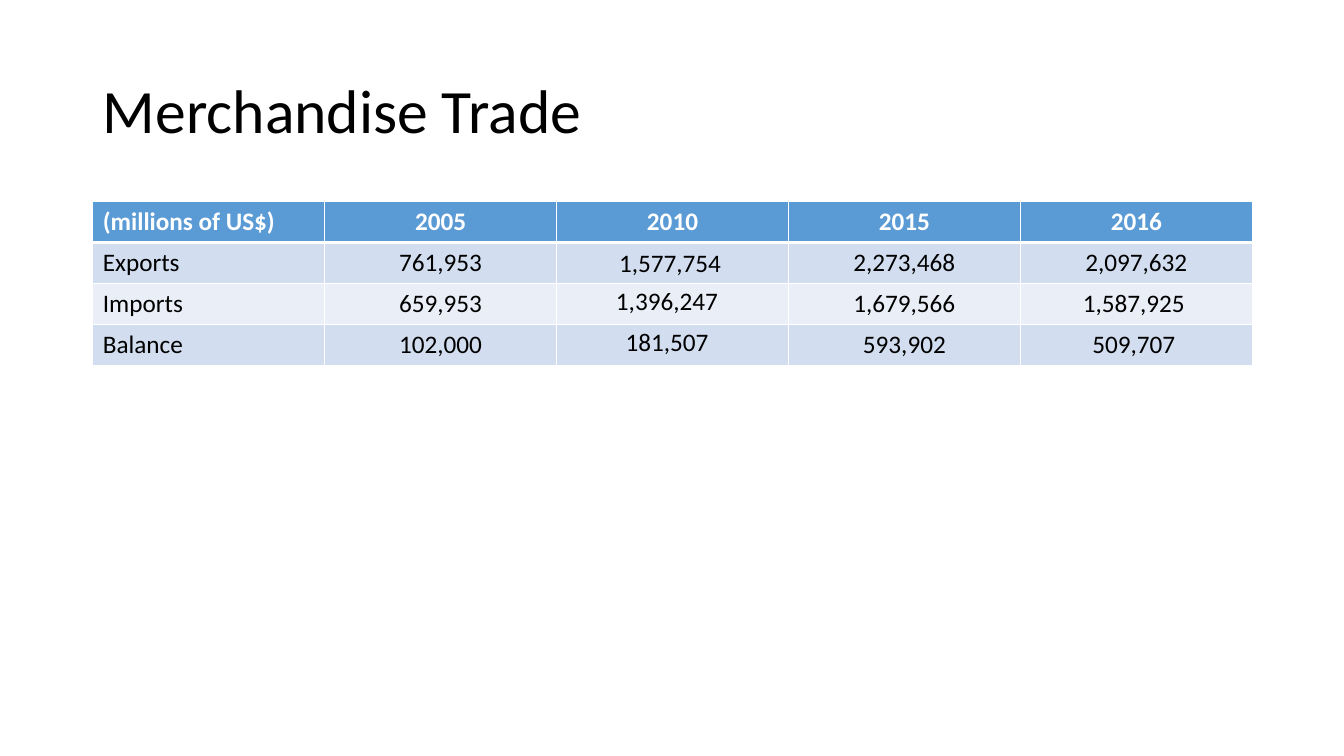
import pptx
import pptx.dml.color
import pptx.enum.text
import pptx.oxml
import pptx.oxml.ns
import pptx.util

Inches = pptx.util.Inches
PP_ALIGN = pptx.enum.text.PP_ALIGN
MIDDLE = pptx.enum.text.MSO_ANCHOR.MIDDLE

TRADE = [
    ["(millions of US$)", "2005", "2010", "2015", "2016"],
    ["Exports", "761,953", "1,577,754", "2,273,468", "2,097,632"],
    ["Imports", "659,953", "1,396,247", "1,679,566", "1,587,925"],
    ["Balance", "102,000", "181,507", "593,902", "509,707"],
]
# (row, column): left, top, right, bottom insets in inches
INSETS = {
    (1, 2): (0.01, 0.01, 0.06, 0),
    (2, 2): (0.01, 0.01, 0.12, 0.05),
    (3, 2): (0.01, 0.01, 0.12, 0.05),
    (2, 4): (0.1, 0.05, 0.15, 0.05),
    (3, 4): (0.1, 0.05, 0.15, 0.05),
}


def rgb(value):
    return pptx.dml.color.RGBColor.from_string(value)


def write(tf, text, size=18, color="000000", bold=False,
          align=PP_ALIGN.LEFT, spacing=None, font="Calibri"):
    p = tf.paragraphs[0]
    p.alignment = align
    if spacing:
        p.line_spacing = spacing
    r = p.add_run()
    r.text = text
    r.font.name = font
    r.font.size = pptx.util.Pt(size)
    r.font.bold = bold
    r.font.color.rgb = rgb(color)


class Deck:
    HEADER = "5B9BD5"
    BANDS = ("D2DEEF", "EAEFF7")
    WHITE = "FFFFFF"

    def __init__(self):
        self.prs = pptx.Presentation()
        self.prs.slide_width = Inches(13.33)
        self.prs.slide_height = Inches(7.5)
        self.s = self.prs.slides.add_slide(self.prs.slide_layouts[5])

    def title(self, text, left, top, width, height):
        sp = self.s.shapes.title
        sp.left, sp.top = Inches(left), Inches(top)
        sp.width, sp.height = Inches(width), Inches(height)
        tf = sp.text_frame
        tf.auto_size = pptx.enum.text.MSO_AUTO_SIZE.NONE
        tf.vertical_anchor = MIDDLE
        write(tf, text, size=44, spacing=0.9)

    def borders(self, cell, row):
        """Draw white cell edges, thicker beneath the header row."""
        widths = {"L": 1, "R": 1, "T": 3 if row == 1 else 1, "B": 3 if row == 0 else 1}
        tcPr = cell._tc.get_or_add_tcPr()
        for i, (side, points) in enumerate(widths.items()):
            tcPr.insert(i, pptx.oxml.parse_xml(
                f'<a:ln{side} {pptx.oxml.ns.nsdecls("a")} w="{pptx.util.Pt(points)}">'
                f'<a:solidFill><a:srgbClr val="{self.WHITE}"/></a:solidFill></a:ln{side}>'))

    def table(self, rows, left, top, width, height, insets):
        table = self.s.shapes.add_table(
            len(rows), len(rows[0]), Inches(left), Inches(top),
            Inches(width), Inches(height)).table
        for i, row in enumerate(rows):
            for j, text in enumerate(row):
                cell = table.cell(i, j)
                header = i == 0
                cell.fill.solid()
                cell.fill.fore_color.rgb = rgb(self.HEADER if header else self.BANDS[(i - 1) % 2])
                self.borders(cell, i)
                if (i, j) in insets:
                    (cell.margin_left, cell.margin_top, cell.margin_right,
                     cell.margin_bottom) = map(Inches, insets[i, j])
                if j == 2 and not header:
                    cell.vertical_anchor = MIDDLE
                write(cell.text_frame, text, bold=header,
                      color=self.WHITE if header else "000000",
                      align=PP_ALIGN.CENTER if j else PP_ALIGN.LEFT)


def main():
    deck = Deck()
    deck.title("Merchandise Trade", 0.92, 0.4, 11.5, 1.45)
    deck.table(TRADE, 0.92, 2, 11.5, 1.62, INSETS)
    deck.prs.save("out.pptx")


if __name__ == "__main__":
    main()
